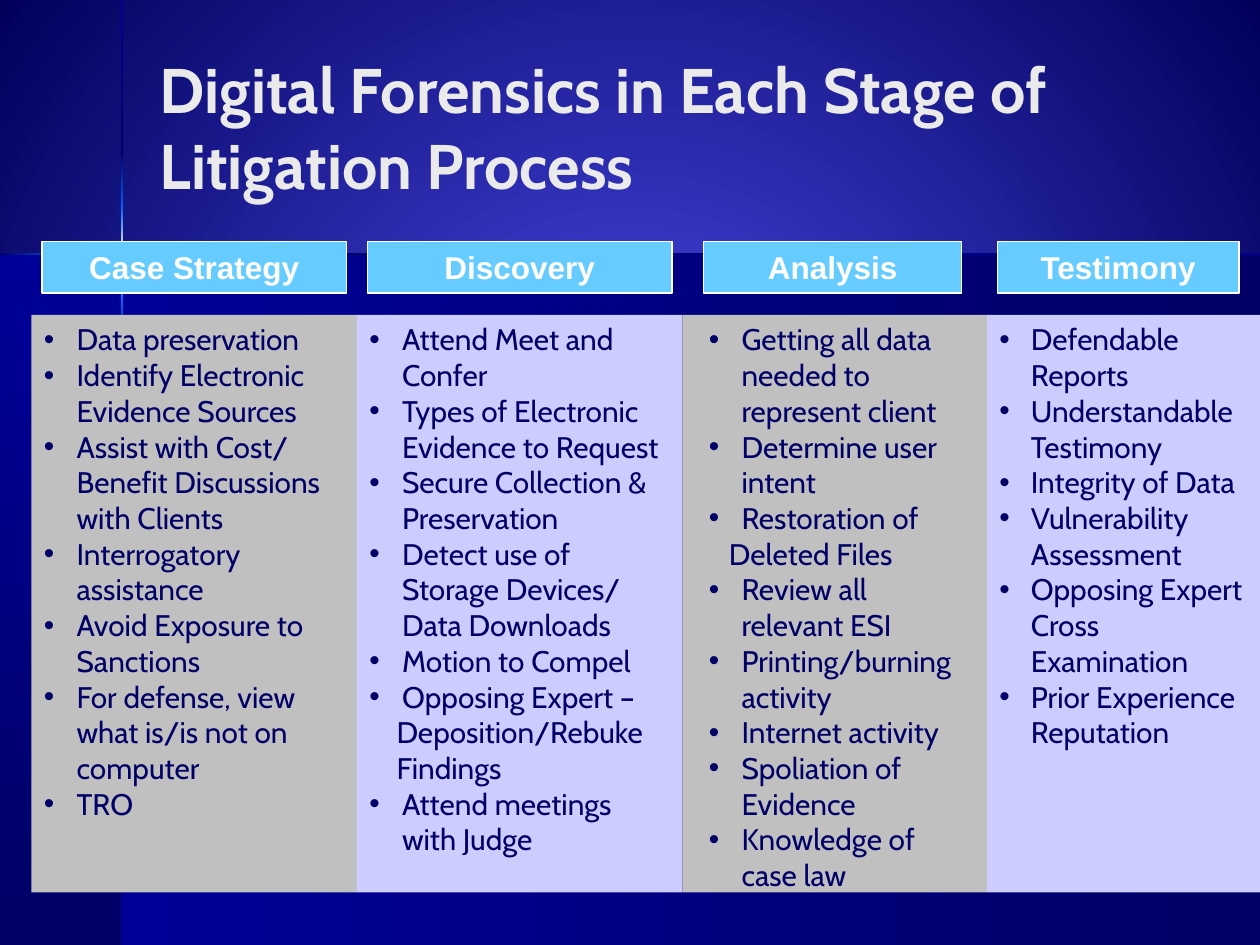
from dataclasses import dataclass

from lxml.etree import SubElement
from pptx import Presentation
from pptx.dml.color import RGBColor
from pptx.enum.shapes import MSO_SHAPE
from pptx.enum.text import MSO_ANCHOR, MSO_AUTO_SIZE, PP_ALIGN
from pptx.oxml.ns import qn
from pptx.util import Pt

NAVY = RGBColor(0x00, 0x00, 0x66)
BLUE = RGBColor(0x00, 0x00, 0x99)
BRIGHT = RGBColor(0x00, 0x66, 0xFF)
CREAM = RGBColor(0xFF, 0xFF, 0xCC)
GLOW = RGBColor(0x4A, 0x4A, 0xE9)
MIDNIGHT = RGBColor(0x00, 0x00, 0x5B)
PALE = RGBColor(0xEA, 0xEA, 0xEA)
WHITE = RGBColor(0xFF, 0xFF, 0xFF)
SKY = RGBColor(0x66, 0xCC, 0xFF)
GRAY = RGBColor(0xC0, 0xC0, 0xC0)
LAVENDER = RGBColor(0xCC, 0xCC, 0xFF)

ACROSS, DOWN = 0, 90
BANDS = [
    (70, 145.5, 650, 394.5, ACROSS, [BLUE, NAVY]),
    (0, 145.5, 70, 394.5, DOWN, [BLUE, NAVY]),
    (69.2, 0.5, 1.2, 86.5, DOWN, [BLUE, NAVY]),
    (69.2, 203, 1.2, 337, DOWN, [NAVY, BLUE]),
    (127.5, 144.8, 592.5, 1.2, ACROSS, [NAVY, BLUE]),
    (69.2, 171.5, 1.2, 31.5, DOWN, [BRIGHT, NAVY]),
    (69.2, 87, 1.2, 32, DOWN, [NAVY, BRIGHT]),
    (69.2, 119, 1.2, 52.5, DOWN, [BRIGHT, CREAM, BRIGHT]),
    (0, 144.8, 44, 1.2, ACROSS, [NAVY, BRIGHT]),
]


@dataclass
class Stage:
    name: str
    header_left: float
    header_width: float
    width: float
    color: RGBColor
    margin: float
    hanging: float
    continuation: float
    items: list


STAGES = [
    Stage("Case Strategy", 24, 174, 186, GRAY, 18.7, 18.7, 0, [
        "Data preservation",
        "Identify Electronic Evidence Sources",
        "Assist with Cost/ Benefit Discussions with Clients",
        "Interrogatory assistance",
        "Avoid Exposure to Sanctions",
        "For defense, view what is/is not on computer",
        "TRO",
    ]),
    Stage("Discovery", 210, 174, 186, LAVENDER, 18.7, 18.7, 15.5, [
        "Attend Meet and Confer",
        "Types of Electronic Evidence to Request",
        "Secure Collection & Preservation",
        "Detect use of Storage Devices/ Data Downloads",
        "Motion to Compel",
        "Opposing Expert –",
        "Deposition/Rebuke",
        "Findings",
        "Attend meetings with Judge",
    ]),
    Stage("Analysis", 402, 147.6, 174, GRAY, 26.7, 18.7, 19.5, [
        "Getting all data needed to represent client",
        "Determine user intent",
        "Restoration of",
        "Deleted Files",
        "Review all relevant ESI",
        "Printing/burning activity",
        "Internet activity",
        "Spoliation of Evidence",
        "Knowledge of case law",
    ]),
    Stage("Testimony", 570, 138, 156, LAVENDER, 18, 18, 0, [
        "Defendable Reports",
        "Understandable Testimony",
        "Integrity of Data",
        "Vulnerability Assessment",
        "Opposing Expert Cross Examination",
        "Prior Experience Reputation",
    ]),
]
CONTINUATIONS = {"Deposition/Rebuke", "Findings", "Deleted Files"}


class SlideBuilder:
    body_font = "Cabin"
    header_font = "Arial"

    def __init__(self, slide):
        self.slide = slide

    def style(self, para, font, size, color, bold=False):
        for span in para.runs:
            span.font.name = font
            span.font.size = Pt(size)
            span.font.color.rgb = color
            span.font.bold = bold

    def gradient(self, element, colors, angle=None):
        for child in list(element):
            element.remove(child)
        stops = SubElement(element, qn("a:gsLst"))
        for index, color in enumerate(colors):
            position = 100000 * index // (len(colors) - 1)
            stop = SubElement(stops, qn("a:gs"), pos=str(position))
            SubElement(stop, qn("a:srgbClr"), val=str(color))
        if angle is None:
            shade = SubElement(element, qn("a:path"))
            shade.set("path", "circle")
            sides = dict.fromkeys("ltrb", "50000")
            SubElement(shade, qn("a:fillToRect"), **sides)
        else:
            SubElement(element, qn("a:lin"), ang=str(angle * 60000), scaled="0")

    def background(self, colors):
        self.slide.background.fill.gradient()
        element = self.slide.element.xpath("./p:cSld/p:bg//a:gradFill")[0]
        self.gradient(element, colors)

    def box(self, left, top, width, height, color=None):
        box = self.slide.shapes.add_shape(
            MSO_SHAPE.RECTANGLE, Pt(left), Pt(top), Pt(width), Pt(height))
        box.shadow.inherit = False
        box.line.fill.background()
        if color is not None:
            box.fill.solid()
            box.fill.fore_color.rgb = color
        return box

    def band(self, left, top, width, height, angle, colors):
        box = self.box(left, top, width, height)
        box.fill.gradient()
        element = box.element.xpath("./p:spPr/a:gradFill")[0]
        self.gradient(element, colors, angle)

    def title(self, text):
        title = self.slide.shapes.title
        title.left, title.top = Pt(84), Pt(24)
        title.width, title.height = Pt(558), Pt(96)
        frame = title.text_frame
        frame.text = text
        frame.word_wrap = True
        frame.auto_size = MSO_AUTO_SIZE.NONE
        frame.vertical_anchor = MSO_ANCHOR.MIDDLE
        para = frame.paragraphs[0]
        para.alignment = PP_ALIGN.LEFT
        self.style(para, self.body_font, 36, PALE, bold=True)

    def header(self, stage):
        box = self.box(stage.header_left, 138, stage.header_width, 29.5, SKY)
        box.line.color.rgb = WHITE
        box.line.width = Pt(0.75)
        frame = box.text_frame
        frame.text = stage.name
        frame.vertical_anchor = MSO_ANCHOR.MIDDLE
        para = frame.paragraphs[0]
        para.alignment = PP_ALIGN.CENTER
        self.style(para, self.header_font, 18, WHITE, bold=True)

    def column(self, stage, left):
        box = self.box(left, 180, stage.width, 330, stage.color)
        frame = box.text_frame
        frame.word_wrap = True
        frame.vertical_anchor = MSO_ANCHOR.TOP
        frame.text = "\n".join(stage.items)
        for para, item in zip(frame.paragraphs, stage.items):
            para.alignment = PP_ALIGN.LEFT
            self.style(para, self.body_font, 17, NAVY)
            bulleted = item not in CONTINUATIONS
            margin = stage.margin if bulleted else stage.continuation
            properties = para._p.get_or_add_pPr()
            properties.set("marL", str(Pt(margin)))
            properties.set("indent", str(-Pt(stage.hanging) if bulleted else 0))
            if bulleted:
                SubElement(properties, qn("a:buFont"), typeface="Arial")
                SubElement(properties, qn("a:buChar"), char="•")
            else:
                SubElement(properties, qn("a:buNone"))


def main():
    deck = Presentation()
    deck.slide_width, deck.slide_height = Pt(720), Pt(540)
    builder = SlideBuilder(deck.slides.add_slide(deck.slide_layouts[5]))
    builder.background([GLOW, MIDNIGHT])
    for band in BANDS:
        builder.band(*band)
    builder.title("Digital Forensics in Each Stage of Litigation Process")
    left = 18
    for stage in STAGES:
        builder.column(stage, left)
        builder.header(stage)
        left += stage.width
    deck.save("out.pptx")


if __name__ == "__main__":
    main()
